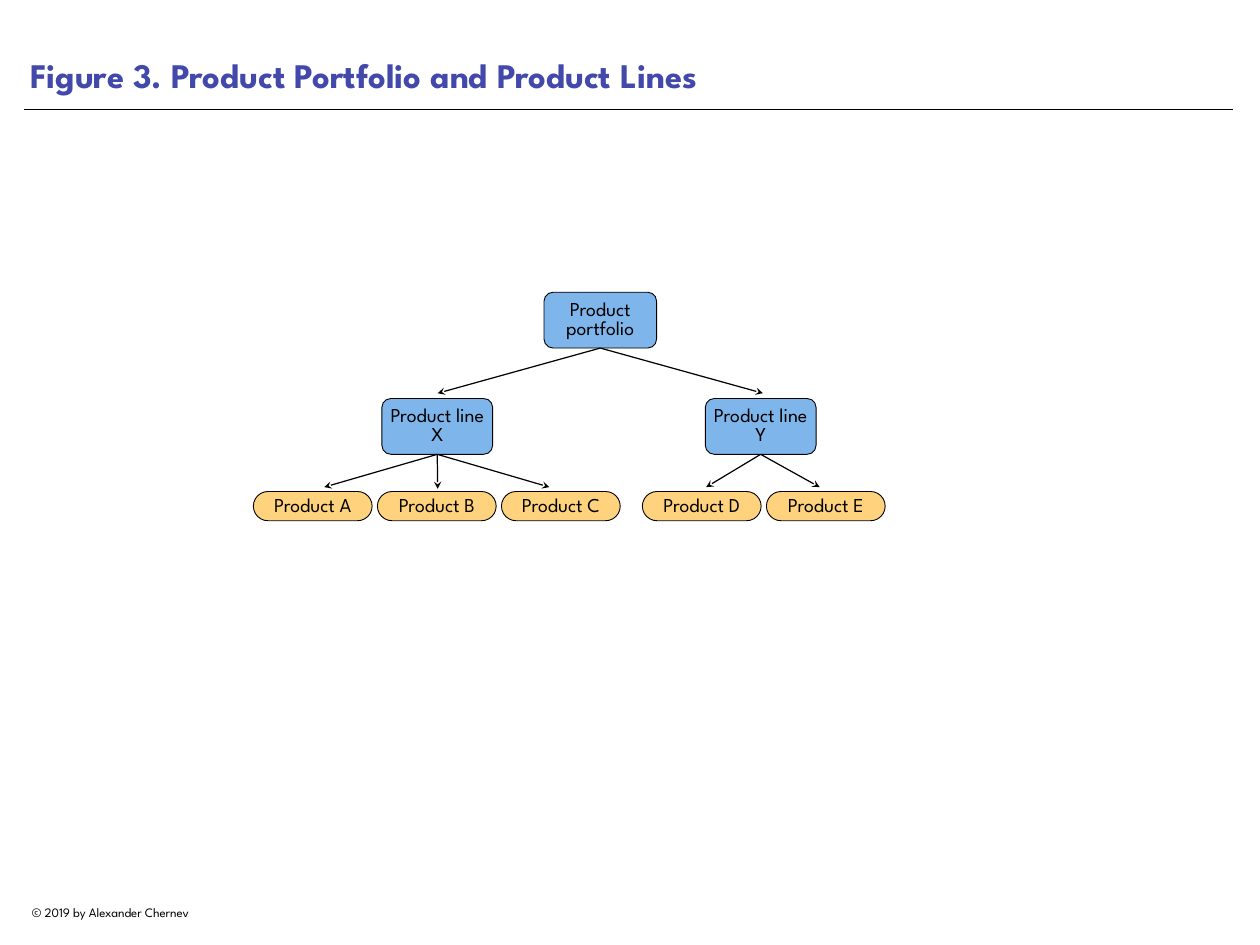
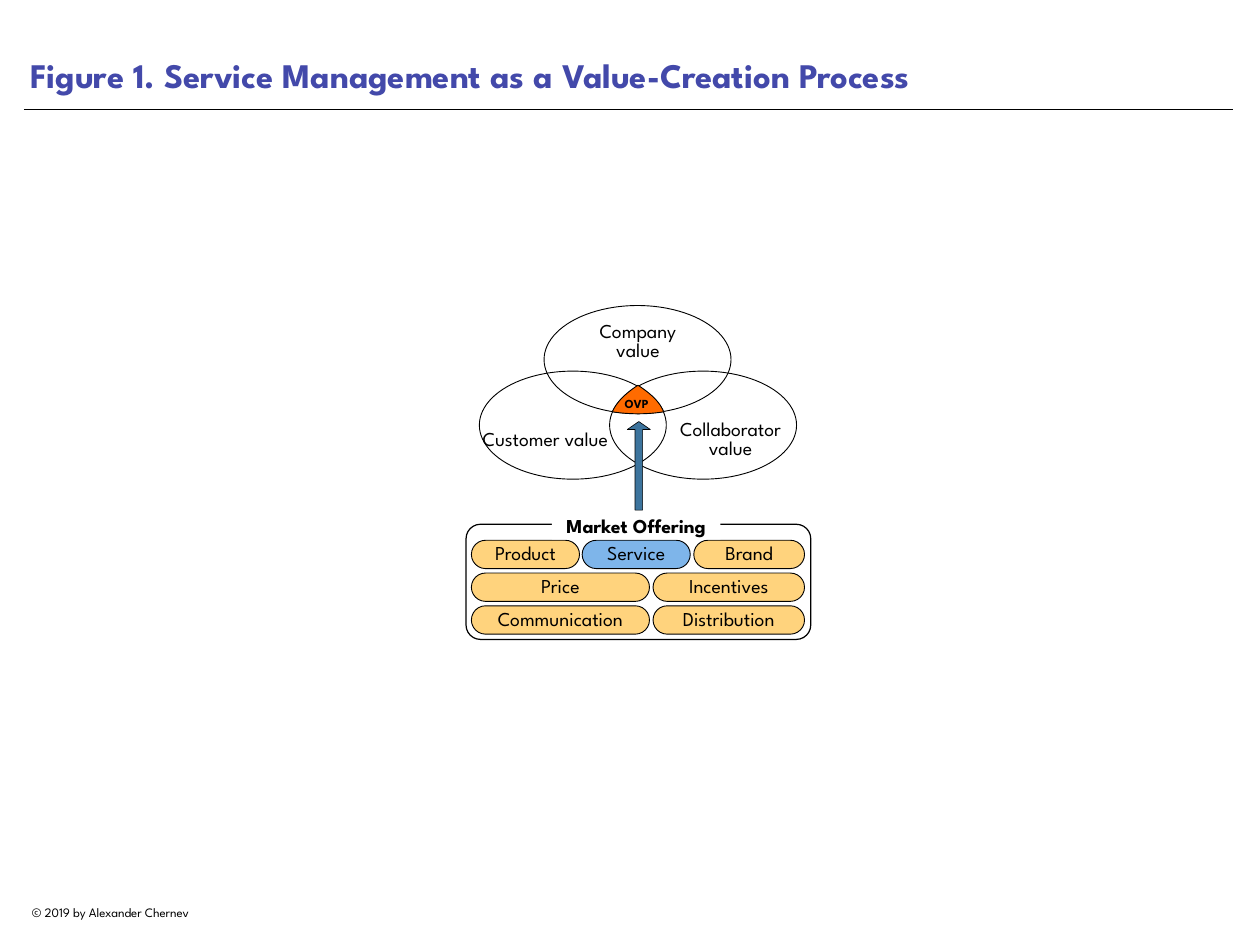
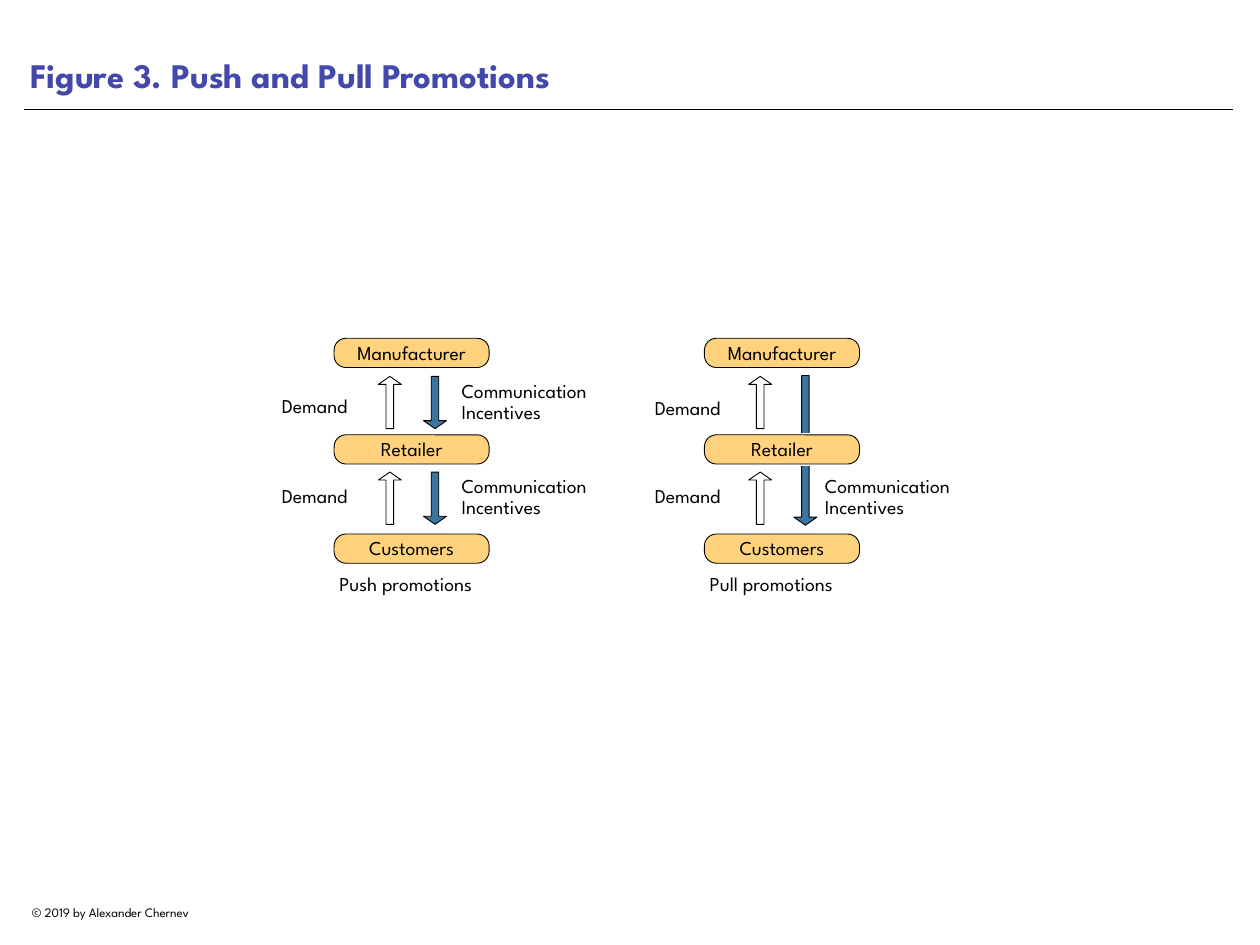
import pptx
import pptx.util
import pptx.dml.color
import pptx.enum.shapes
import pptx.enum.text
import pptx.oxml.ns
import pptx.shapes.connector
import lxml.etree

Inches = pptx.util.Inches
Pt = pptx.util.Pt
RGBColor = pptx.dml.color.RGBColor
Kind = pptx.enum.shapes.MSO_SHAPE
Wire = pptx.enum.shapes.MSO_CONNECTOR
Align = pptx.enum.text.PP_ALIGN
Anchor = pptx.enum.text.MSO_ANCHOR
qn = pptx.oxml.ns.qn

BLACK = RGBColor(0x00, 0x00, 0x00)
WHITE = RGBColor(0xFF, 0xFF, 0xFF)
INDIGO = RGBColor(0x43, 0x49, 0xAA)
SKY = RGBColor(0x7E, 0xB5, 0xEA)
SAND = RGBColor(0xFF, 0xD3, 0x7D)
STEEL = RGBColor(0x3D, 0x74, 0x9D)
ORANGE = RGBColor(0xFF, 0x6B, 0x00)
FONT = "League Spartan"
HEAD = (0.329, 0.347)


def write(shape, text, size=16, color=BLACK, bold=False, align=Align.CENTER,
          anchor=Anchor.MIDDLE, pad=0, gap=0.8):
    frame = shape.text_frame
    frame.word_wrap = True
    frame.vertical_anchor = anchor
    frame.margin_left = frame.margin_right = Inches(pad)
    frame.margin_top = frame.margin_bottom = Inches(pad)
    for i, line in enumerate(text.split("\n")):
        para = frame.add_paragraph() if i else frame.paragraphs[0]
        para.alignment = align
        para.line_spacing = gap
        run = para.add_run()
        run.text = line
        run.font.name = FONT
        run.font.size = Pt(size)
        run.font.bold = bold
        run.font.color.rgb = color


def form(page, kind, box, fill=None, edge=0.75, adjust=(), text="", **style):
    shape = page.shapes.add_shape(kind, *map(Inches, box))
    shape.shadow.inherit = False
    for i, value in enumerate(adjust):
        shape.adjustments[i] = value
    if fill is None:
        shape.fill.background()
    else:
        shape.fill.solid()
        shape.fill.fore_color.rgb = fill
    if edge:
        shape.line.color.rgb = BLACK
        shape.line.width = Pt(edge)
    else:
        shape.line.fill.background()
    if text:
        write(shape, text, **style)
    return shape


deck = pptx.Presentation()
deck.slide_width = Inches(14.22)
deck.slide_height = Inches(10.67)

for name in (
    "Figure 3. Product Portfolio and Product Lines",
    "Figure 1. Service Management as a Value-Creation Process",
    "Figure 3. Push and Pull Promotions",
):
    page = deck.slides.add_slide(deck.slide_layouts[5])
    title = page.shapes.title
    title.left, title.top = Inches(0.27), Inches(0)
    title.width, title.height = Inches(13.64), Inches(1.15)
    write(title, name, 28, INDIGO, True, Align.LEFT, Anchor.BOTTOM, 0.07, 1)
    rule = page.shapes.add_connector(
        Wire.STRAIGHT, Inches(0.27), Inches(1.24), Inches(13.92), Inches(1.24))
    rule.line.color.rgb = BLACK
    rule.line.width = Pt(0.5)
    foot = page.shapes.add_textbox(
        Inches(0.27), Inches(10.16), Inches(2.34), Inches(0.28))
    write(foot, "© 2019 by Alexander Chernev", 10.5, align=Align.LEFT, pad=0.09, gap=1)

tree, value, promo = deck.slides

for text, left, top, width, ends in (
    ("Product portfolio", 6.14, 3.3, 1.27, ((4.94, 4.44), (8.61, 4.44))),
    ("Product line X", 4.31, 4.5, 1.25, ((3.66, 5.5), (4.94, 5.52), (6.2, 5.5))),
    ("Product line Y", 7.96, 4.5, 1.25, ((7.97, 5.5), (9.25, 5.5))),
):
    node = form(tree, Kind.ROUNDED_RECTANGLE, (left, top, width, 0.63), SKY,
                adjust=(0.16,), text=text, pad=0.04)
    for x, y in ends:
        wire = tree.shapes.add_connector(
            Wire.STRAIGHT, node.left + node.width // 2, node.top + node.height,
            Inches(x), Inches(y))
        wire.begin_connect(node, 2)
        wire.line.color.rgb = BLACK
        wire.line.width = Pt(1)
        edge = wire._element.spPr.find(qn("a:ln"))
        lxml.etree.SubElement(edge, qn("a:tailEnd"), type="stealth")

for start, names in ((2.86, "ABC"), (7.25, "DE")):
    for i, name in enumerate(names):
        form(tree, Kind.ROUNDED_RECTANGLE, (start + 1.4 * i, 5.55, 1.34, 0.33), SAND,
             adjust=(0.5,), text="Product " + name, anchor=Anchor.BOTTOM)

for left, top, text, box in (
    (5.41, 4.19, "Customer value", (5.43, 4.58, 1.45, 0.79)),
    (6.88, 4.19, "Collaborator\nvalue", (7.57, 4.63, 1.35, 0.68)),
    (6.14, 3.45, "Company\nvalue", (6.33, 3.57, 1.74, 0.59)),
):
    form(value, Kind.OVAL, (left, top, 2.11, 1.22))
    write(value.shapes.add_textbox(*map(Inches, box)), text)

dots = []
for curve in (
    ((6.91, 4.65), (6.96, 4.54), (7.06, 4.44), (7.2, 4.35)),
    ((7.2, 4.35), (7.34, 4.44), (7.45, 4.54), (7.49, 4.65)),
    ((7.49, 4.65), (7.31, 4.68), (7.1, 4.68), (6.91, 4.65)),
):
    for step in range(12):
        t = step / 12
        parts = ((1 - t) ** 3, 3 * t * (1 - t) ** 2, 3 * t * t * (1 - t), t ** 3)
        dots.append(tuple(
            Inches(sum(p * dot[axis] for p, dot in zip(parts, curve)))
            for axis in (0, 1)))
build = value.shapes.build_freeform(*dots[0])
build.add_line_segments(dots[1:], close=True)
core = build.convert_to_shape()
core.shadow.inherit = False
core.fill.solid()
core.fill.fore_color.rgb = ORANGE
core.line.color.rgb = BLACK
core.line.width = Pt(0.75)
label = value.shapes.add_textbox(Inches(7.05), Inches(4.46), Inches(0.46), Inches(0.2))
write(label, "OVP", 10, bold=True, align=Align.LEFT, gap=1)

form(value, Kind.ROUNDED_RECTANGLE, (5.26, 5.92, 3.89, 1.3), edge=1, adjust=(0.125,))
for row, cells in enumerate((
    (("Product", 5.32, 1.22), ("Service", 6.57, 1.22), ("Brand", 7.83, 1.25)),
    (("Price", 5.32, 2.01), ("Incentives", 7.37, 1.71)),
    (("Communication", 5.32, 2.01), ("Distribution", 7.37, 1.71)),
)):
    for text, left, width in cells:
        form(value, Kind.ROUNDED_RECTANGLE, (left, 6.1 + 0.37 * row, width, 0.32),
             SKY if text == "Service" else SAND, adjust=(0.5,), text=text,
             anchor=Anchor.BOTTOM)
form(value, Kind.RECTANGLE, (6.23, 5.77, 1.9, 0.32), WHITE, 0,
     text="Market Offering", bold=True, gap=1)
form(value, Kind.UP_ARROW, (7.08, 4.76, 0.26, 1), STEEL, 0.5, HEAD)

for left, name, side, high, downs, notes in (
    (3.77, "Push promotions", 3.12, 4.39, ((4.25, 0.59), (5.33, 0.59)),
     ((5.15, 4.25), (5.15, 5.32))),
    (7.95, "Pull promotions", 7.33, 4.41, ((4.24, 1.69),), ((9.25, 5.32),)),
):
    for top, height in downs:
        form(promo, Kind.DOWN_ARROW, (left + 1.01, top, 0.26, height), STEEL,
             adjust=HEAD)
    if len(downs) == 1:
        form(promo, Kind.RECTANGLE, (left + 0.85, 4.89, 1.08, 0.37), WHITE, 0)
    for top in (4.25, 5.33):
        form(promo, Kind.UP_ARROW, (left + 0.5, top, 0.26, 0.59), WHITE, adjust=HEAD)
    for text, top in (("Manufacturer", 3.82), ("Retailer", 4.91), ("Customers", 6.03)):
        form(promo, Kind.ROUNDED_RECTANGLE, (left, top, 1.75, 0.33), SAND,
             adjust=(0.409,), text=text, anchor=Anchor.BOTTOM)
    for text, x, y, width, height, gap in (
        ("Demand", side, high, 1.08, 0.39, 1),
        ("Demand", side, 5.4, 1.08, 0.39, 1),
        (name, left, 6.4, 1.88, 0.39, 1),
        *(("Communication\nIncentives", x, y, 1.88, 0.6, 0.9) for x, y in notes),
    ):
        box = promo.shapes.add_textbox(*map(Inches, (x, y, width, height)))
        write(box, text, align=Align.LEFT, pad=0.06, gap=gap)

for page in deck.slides:
    for shape in page.shapes:
        if isinstance(shape, pptx.shapes.connector.Connector):
            lxml.etree.SubElement(shape._element.spPr, qn("a:effectLst"))

deck.save("out.pptx")
